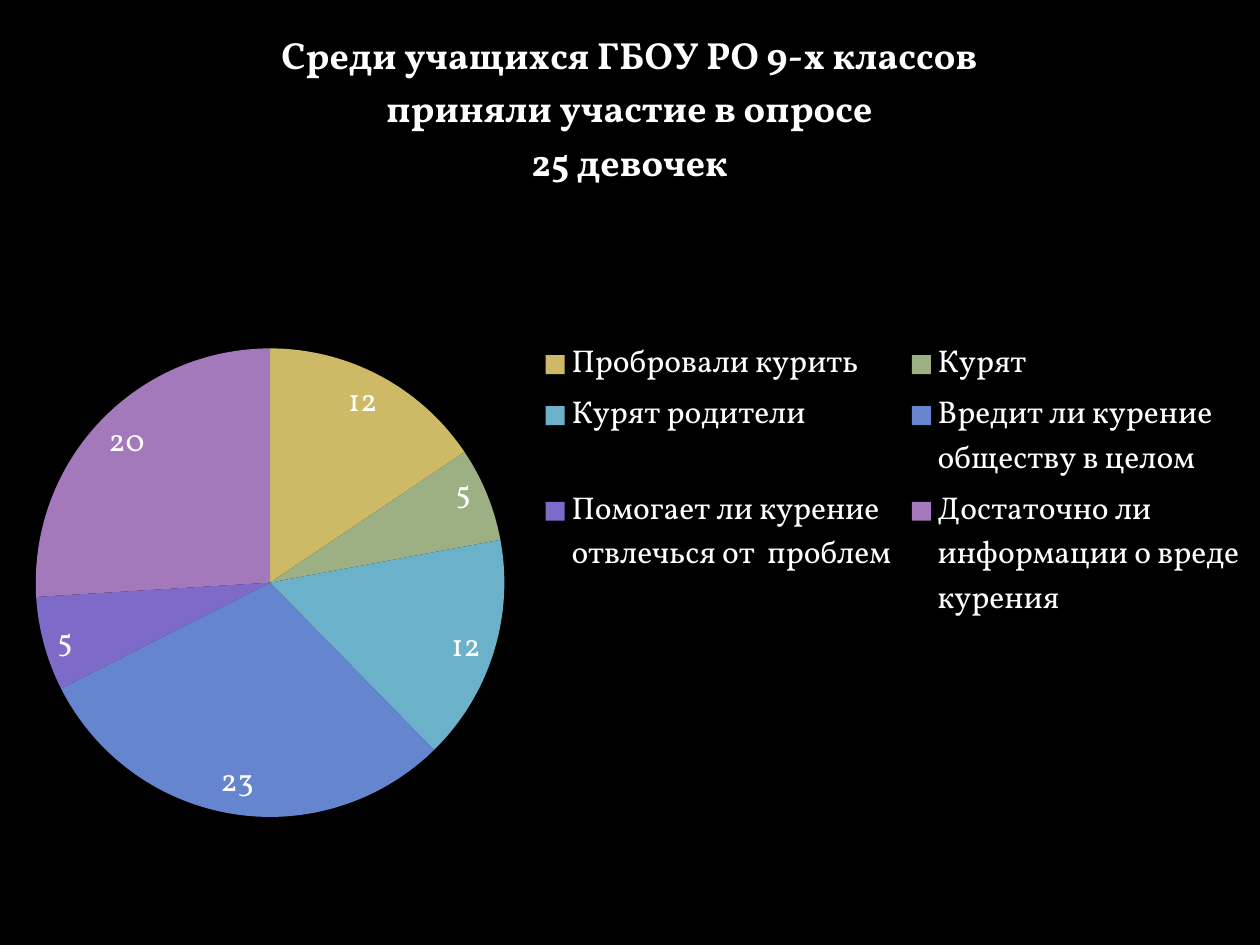
import pptx
import pptx.chart.data
import pptx.dml.color
import pptx.enum.chart
import pptx.util
from pptx.util import Cm

ANSWERS = [
    ("Пробровали курить", 12, "CEB966"),
    ("Курят", 5, "9CB084"),
    ("Курят родители", 12, "6BB1C9"),
    ("Вредит ли курение обществу в целом", 23, "6585CF"),
    ("Помогает ли курение отвлечься от  проблем", 5, "7E6BC9"),
    ("Достаточно ли информации о вреде курения", 20, "A379BB"),
]
TITLE = "Среди учащихся ГБОУ РО 9-х классов\n приняли участие в опросе \n25 девочек"


def color(value):
    return pptx.dml.color.RGBColor.from_string(value)


class SurveySlide:
    font_name = "Vollkorn"
    text_color = "FFFFFF"
    background = "000000"

    def __init__(self, deck):
        self.slide = deck.slides.add_slide(deck.slide_layouts[6])
        fill = self.slide.background.fill
        fill.solid()
        fill.fore_color.rgb = color(self.background)

    def style(self, font, size, bold=False):
        font.name = self.font_name
        font.size = pptx.util.Pt(size)
        font.bold = bold
        font.color.rgb = color(self.text_color)

    def pie(self, left, top, width, height, answers):
        data = pptx.chart.data.CategoryChartData()
        data.categories = [label for label, _, _ in answers]
        data.add_series("Series 1", [count for _, count, _ in answers])
        chart = self.slide.shapes.add_chart(
            pptx.enum.chart.XL_CHART_TYPE.PIE, left, top, width, height, data).chart
        self.style(chart.font, 18)

        # Slices and their values
        plot = chart.plots[0]
        plot.vary_by_categories = True
        for index, (_, _, shade) in enumerate(answers):
            slice_format = plot.series[0].points[index].format
            slice_format.fill.solid()
            slice_format.fill.fore_color.rgb = color(shade)
            slice_format.line.fill.background()
        plot.has_data_labels = True
        labels = plot.data_labels
        labels.show_value = True
        labels.show_percentage = False
        labels.position = pptx.enum.chart.XL_LABEL_POSITION.BEST_FIT
        self.style(labels.font, 18)
        return chart

    def chart_title(self, chart, text):
        chart.has_title = True
        chart.chart_title.include_in_layout = False
        frame = chart.chart_title.text_frame
        frame.text = text
        for para in frame.paragraphs:
            for span in para.runs:
                self.style(span.font, 21.6, bold=True)

    def legend(self, chart):
        chart.has_legend = True
        chart.legend.position = pptx.enum.chart.XL_LEGEND_POSITION.RIGHT
        chart.legend.include_in_layout = False
        self.style(chart.legend.font, 18)


def main():
    deck = pptx.Presentation()
    deck.slide_width, deck.slide_height = Cm(25.4), Cm(19.05)
    survey = SurveySlide(deck)

    # Survey results fill the slide
    chart = survey.pie(Cm(0), Cm(0), Cm(25.4), Cm(19.46), ANSWERS)
    survey.chart_title(chart, TITLE)
    survey.legend(chart)

    deck.save("out.pptx")


if __name__ == "__main__":
    main()
